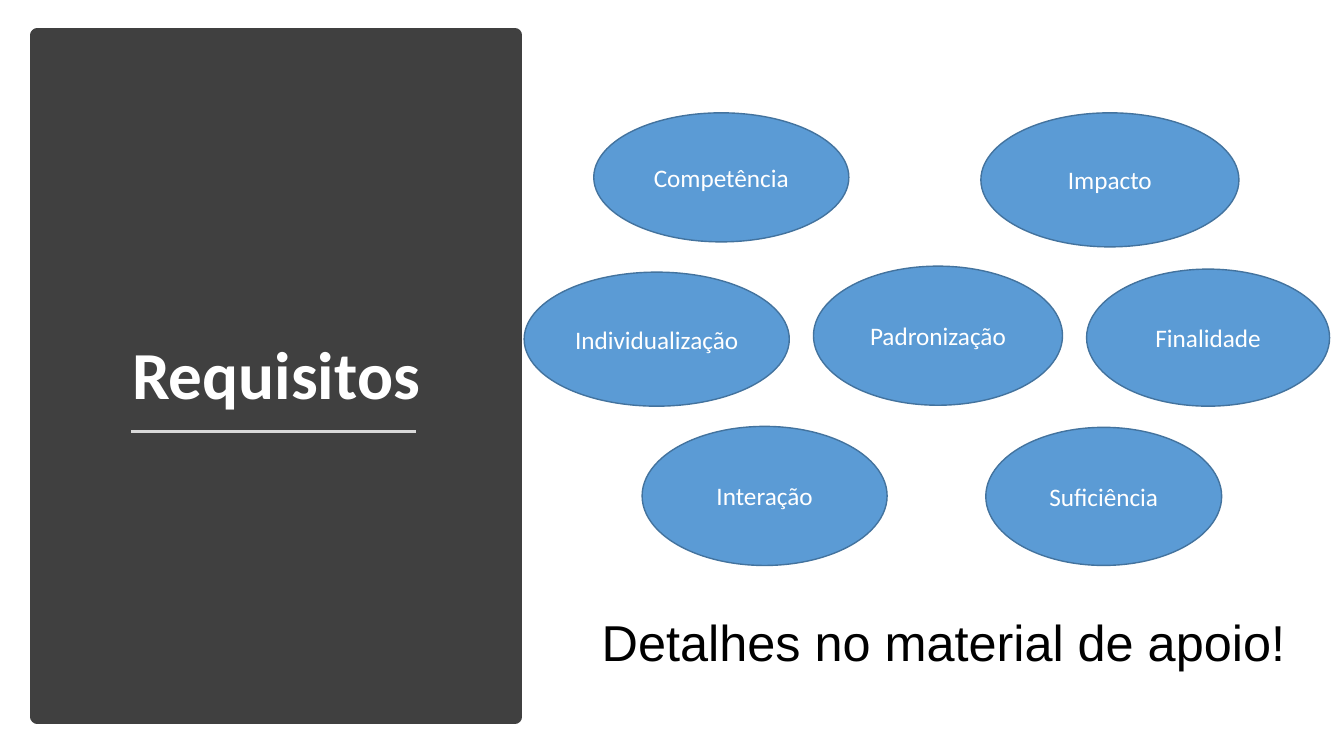
from lxml import etree
from pptx import Presentation
from pptx import util as u
from pptx.dml.color import RGBColor
from pptx.enum import shapes, text
from pptx.oxml.ns import qn

COLORS = {
    "panel": "404040", "rule": "D9D9D9", "oval": "5B9BD5",
    "edge": "43739E", "light": "FFFFFF", "dark": "000000",
}
WIDTH, HEIGHT = u.Inches(13.33), u.Inches(7.5)

# Label, then left, top, width, height in percent of the slide
REQUIREMENTS = [
    ("Individualização", 39, 36, 19.73, 17.73),
    ("Competência", 44.18, 14.93, 18.98, 17.07),
    ("Interação", 47.78, 56.4, 18.23, 18.4),
    ("Impacto", 72.98, 14.93, 19.2, 17.73),
    ("Padronização", 60.53, 35.2, 18.53, 18.4),
    ("Suficiência", 73.35, 56.53, 17.55, 18.27),
    ("Finalidade", 80.85, 35.6, 18.08, 18.13),
]


def rgb(name):
    return RGBColor.from_string(COLORS[name])


def area(x, y, w, h):
    """Turn percentages of the slide into lengths."""
    return tuple(u.Emu(round(share * side / 100))
                 for share, side in zip((x, y, w, h), (WIDTH, HEIGHT) * 2))


def write(sp, words, size, color="light", font="Calibri", bold=False,
          align=text.PP_ALIGN.CENTER, anchor=text.MSO_ANCHOR.MIDDLE):
    tf = sp.text_frame
    tf.word_wrap = True
    tf.auto_size = text.MSO_AUTO_SIZE.NONE
    tf.vertical_anchor = anchor
    p = tf.paragraphs[0]
    p.alignment = align
    r = p.add_run()
    r.text = words
    r.font.name, r.font.size, r.font.bold = font, u.Pt(size), bold
    r.font.color.rgb = rgb(color)
    return p


def add_block(s, kind, box, fill, line, weight):
    sp = s.shapes.add_shape(kind, *area(*box))
    sp.shadow.inherit = False
    sp.fill.solid()
    sp.fill.fore_color.rgb = rgb(fill)
    sp.line.color.rgb = rgb(line)
    sp.line.width = u.Pt(weight)
    return sp


def add_rule(s, x, y, length):
    left, top, width, _ = area(x, y, length, 0)
    line = s.shapes.add_connector(shapes.MSO_CONNECTOR.STRAIGHT,
                                  left, top, left + width, top)
    line.line.color.rgb = rgb("rule")
    line.line.width = u.Pt(1.75)
    etree.SubElement(line.element.spPr, qn("a:effectLst"))


def place_title(s, words, box):
    """Put the title placeholder in front of the panel."""
    title = s.shapes.title
    title.left, title.top, title.width, title.height = area(*box)
    title.element.getparent().append(title.element)
    p = write(title, words, 48, bold=True, anchor=text.MSO_ANCHOR.BOTTOM)
    p.line_spacing = 0.9
    p.space_after = u.Pt(6)


def main():
    prs = Presentation()
    prs.slide_width, prs.slide_height = WIDTH, HEIGHT
    s = prs.slides.add_slide(prs.slide_layouts[5])

    add_block(s, shapes.MSO_SHAPE.RECTANGLE, (2.78, 4.67, 35.55, 90.13),
              "panel", "panel", 10)
    add_rule(s, 9.75, 57.07, 21.23)
    place_title(s, "Requisitos", (5.55, 13.33, 30, 42.13))

    for label, *box in REQUIREMENTS:
        oval = add_block(s, shapes.MSO_SHAPE.OVAL, box, "oval", "edge", 1)
        write(oval, label, 18)

    note = s.shapes.add_textbox(*area(44.03, 80.13, 52.95, 9.47))
    write(note, "Detalhes no material de apoio!", 36, "dark", "Arial",
          align=text.PP_ALIGN.LEFT, anchor=text.MSO_ANCHOR.TOP)

    prs.save("out.pptx")


if __name__ == "__main__":
    main()
